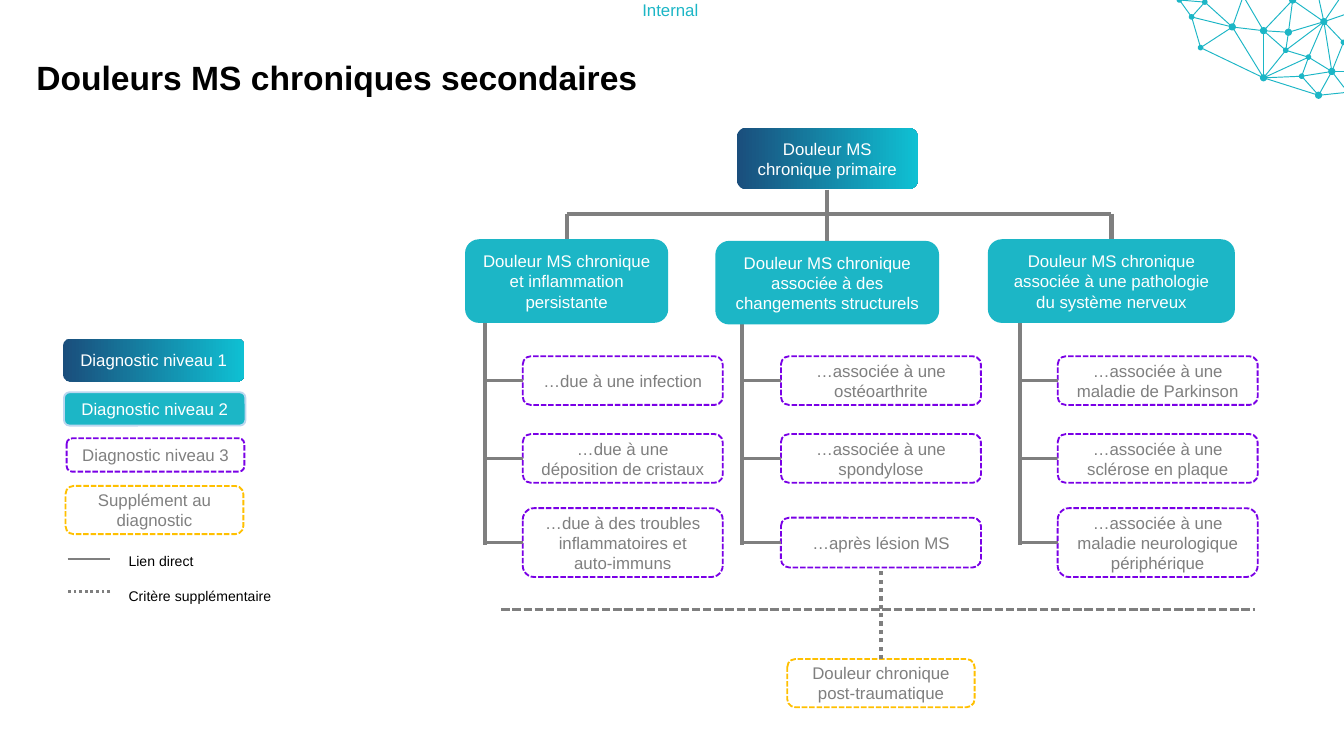
import pptx
import pptx.dml.color
import pptx.enum.dml
import pptx.enum.shapes
import pptx.enum.text
import pptx.oxml.ns
import pptx.util
from lxml import etree

Cm, Pt = pptx.util.Cm, pptx.util.Pt
SHAPE = pptx.enum.shapes.MSO_SHAPE
ANCHOR = pptx.enum.text.MSO_ANCHOR
ALIGN = pptx.enum.text.PP_ALIGN
DASH = pptx.enum.dml.MSO_LINE.SQUARE_DOT
DOT = pptx.enum.dml.MSO_LINE.ROUND_DOT
TOP, LEFT, BOTTOM = 0, 1, 2

TEAL, GREY, LEGEND_GREY = "1CB6C6", "7F7F7F", "808080"
PURPLE, AMBER, WHITE, BLACK = "7A00E6", "FFC000", "FFFFFF", "000000"
GRADIENT = ("1A4E7C", "0FC0D3")


def rgb(value):
    return pptx.dml.color.RGBColor.from_string(value)


class Diagram:
    """Holds the slide and the shared style."""

    font = "Arial"
    size = 9

    def __init__(self, slide):
        self.slide = slide

    def set_text(self, frame, lines, color, size=None, align=ALIGN.LEFT, bold=False, gap=0):
        frame.word_wrap = True
        for number, line in enumerate(lines):
            paragraph = frame.add_paragraph() if number else frame.paragraphs[0]
            paragraph.text = line
            paragraph.alignment = align
            if number:
                paragraph.space_before = Pt(gap)
            paragraph.font.name = self.font
            paragraph.font.size = Pt(size or self.size)
            paragraph.font.bold = bold
            paragraph.font.color.rgb = rgb(color)

    def label(self, left, top, width, height, lines, color, inset=True,
              anchor=ANCHOR.TOP, **style):
        frame = self.slide.shapes.add_textbox(
            Cm(left), Cm(top), Cm(width), Cm(height)).text_frame
        frame.vertical_anchor = anchor
        if not inset:
            frame.margin_left = frame.margin_right = 0
            frame.margin_top = frame.margin_bottom = 0
        self.set_text(frame, lines, color, **style)

    def box(self, left, top, width, height, text, color, fill=None, border=None, dash=None):
        shape = self.slide.shapes.add_shape(
            SHAPE.ROUNDED_RECTANGLE, Cm(left), Cm(top), Cm(width), Cm(height))
        shape.shadow.inherit = False
        if fill is None:
            shape.fill.background()
        elif isinstance(fill, tuple):
            shape.fill.gradient()
            shape.fill.gradient_angle = 0
            for stop, stop_color, position in zip(shape.fill.gradient_stops, fill, (0, 1)):
                stop.color.rgb = rgb(stop_color)
                stop.position = position
        else:
            shape.fill.solid()
            shape.fill.fore_color.rgb = rgb(fill)
        if border:
            shape.line.color.rgb = rgb(border)
            shape.line.width = Pt(1)
            shape.line.dash_style = dash
        else:
            shape.line.fill.background()
        shape.text_frame.vertical_anchor = ANCHOR.MIDDLE
        self.set_text(shape.text_frame, [text], color, align=ALIGN.CENTER)
        return shape

    def line(self, start, end, width=1.5, color=GREY, dash=None, begin=None, finish=None):
        link = self.slide.shapes.add_connector(
            pptx.enum.shapes.MSO_CONNECTOR.STRAIGHT,
            Cm(start[0]), Cm(start[1]), Cm(end[0]), Cm(end[1]))
        link.line.color.rgb = rgb(color)
        link.line.width = Pt(width)
        if dash:
            link.line.dash_style = dash
        properties = link._element.spPr
        etree.SubElement(properties, pptx.oxml.ns.qn("a:effectLst"))
        if begin:
            link.begin_connect(*begin)
        if finish:
            link.end_connect(*finish)

    def dot(self, center, diameter):
        x, y = center
        shape = self.slide.shapes.add_shape(
            SHAPE.OVAL, Cm(x - diameter / 2), Cm(y - diameter / 2), Cm(diameter), Cm(diameter))
        shape.shadow.inherit = False
        shape.fill.solid()
        shape.fill.fore_color.rgb = rgb(TEAL)
        shape.line.color.rgb = rgb(TEAL)
        shape.line.width = Pt(1)


# Corner network: nodes, links between them, links leaving the slide
NODES = {
    "A": (23.88, 1.47), "B": (23.88, 0.58), "C": (23.29, 0.51), "D": (24.43, 0),
    "E": (25.02, 0.41), "F": (25.39, 0.8), "G": (25.17, 1.35), "H": (24.92, 1.8),
    "I": (24.6, 1.44), "J": (24.35, 0.61), "K": (24.73, 1.08), "L": (24.3, 0.95),
    "M": (22.77, 0.04), "N": (22.69, 0.9), "O": (22.52, 0.32), "P": (22.29, 0),
}
LINKS = ("CA AL EJ LE AK EK LJ AI EG LK DJ KG FG IG IH HG BA JB DB CB MC DE FE "
         "IK LB MO OC AH CN NA ON PO PM").split()
EXITS = [("B", (23.54, 0)), ("C", (23.47, 0)), ("E", (24.93, 0)), ("E", (25.3, 0)),
         ("E", (25.4, 0.28)), ("G", (25.4, 1.35)), ("G", (25.4, 1.65)), ("H", (25.4, 1.75))]

# Columns: level 2 text and box, trunk x, level 3 left, level 3 texts with heights
COLUMNS = [
    ("Douleur MS chronique et inflammation persistante", (8.79, 4.52, 3.84, 1.58), 9.17, 9.88,
     [("…due à une infection", 0.92), ("…due à une déposition de cristaux", 0.92),
      ("…due à des troubles inflammatoires et auto-immuns", 1.3)]),
    ("Douleur MS chronique associée à des changements structurels",
     (13.52, 4.55, 4.23, 1.58), 14.02, 14.76,
     [("…associée à une ostéoarthrite", 0.92), ("…associée à une spondylose", 0.92),
      ("…après lésion MS", 0.94)]),
    ("Douleur MS chronique associée à une pathologie du système nerveux",
     (18.67, 4.52, 4.67, 1.58), 19.28, 19.99,
     [("…associée à une maladie de Parkinson", 0.92),
      ("…associée à une sclérose en plaque", 0.92),
      ("…associée à une maladie neurologique périphérique", 1.3)]),
]
ROW_MIDDLES = (7.19, 8.66, 10.25)
LEVEL3_WIDTH = 3.78
BUS_Y = 4.04


def main():
    deck = pptx.Presentation()
    deck.slide_width, deck.slide_height = Cm(25.4), Cm(14.28)
    diagram = Diagram(deck.slides.add_slide(deck.slide_layouts[6]))

    # Header and corner decoration
    diagram.label(12.14, 0, 1.19, 0.38, ["Internal"], TEAL, inset=False)
    for first, second in LINKS:
        diagram.line(NODES[first], NODES[second], 0.5, TEAL)
    for node, exit_point in EXITS:
        diagram.line(NODES[node], exit_point, 0.5, TEAL)
    for node, center in NODES.items():
        diagram.dot(center, 0.1 if node in "ABCDEGHJ" else 0.07)
    diagram.label(0.69, 1.14, 24.08, 0.69, ["Douleurs MS chroniques secondaires"], BLACK,
                  inset=False, anchor=ANCHOR.BOTTOM, size=18, bold=True)

    # Level 1
    primary = diagram.box(13.92, 2.41, 3.43, 1.17, "Douleur MS chronique primaire",
                          WHITE, GRADIENT)

    # Levels 2 and 3 with their branches
    centers, level2, last_row = [], [], []
    for family, bounds, trunk, left, diagnoses in COLUMNS:
        diagram.line((trunk, 5.97), (trunk, 10.29), 2.25)
        for middle, (diagnosis, height) in zip(ROW_MIDDLES, diagnoses):
            leaf = diagram.box(left, middle - height / 2, LEVEL3_WIDTH, height, diagnosis,
                               GREY, border=PURPLE, dash=DASH)
            diagram.line((trunk, middle), (left, middle), finish=(leaf, LEFT))
        last_row.append(leaf)
        level2.append(diagram.box(*bounds, family, WHITE, TEAL))
        centers.append(bounds[0] + bounds[2] / 2)

    # Links from level 1 to level 2
    diagram.line((centers[0], BUS_Y), (centers[2], BUS_Y), 2.25)
    diagram.line((centers[1], 3.58), (centers[1], 4.55), 2.25,
                 begin=(primary, BOTTOM), finish=(level2[1], TOP))
    for side in (0, 2):
        diagram.line((centers[side], BUS_Y), (centers[side], 4.52), 2.25,
                     finish=(level2[side], TOP))

    # Additional criterion
    diagram.line((9.47, 11.51), (23.72, 11.51), dash=DASH)
    post_traumatic = diagram.box(14.88, 12.45, 3.54, 0.91, "Douleur chronique post-traumatique",
                                 GREY, border=AMBER, dash=DASH)
    diagram.line((16.65, 12.45), (16.65, 10.72), 2.25, dash=DOT,
                 begin=(post_traumatic, TOP), finish=(last_row[1], BOTTOM))

    # Legend
    diagram.box(1.19, 6.4, 3.43, 0.81, "Diagnostic niveau 1", WHITE, GRADIENT)
    diagram.box(1.21, 7.41, 3.43, 0.63, "Diagnostic niveau 2", WHITE, TEAL, "BBD7EF")
    diagram.box(1.26, 8.28, 3.36, 0.63, "Diagnostic niveau 3", LEGEND_GREY,
                border=PURPLE, dash=DASH)
    diagram.box(1.24, 9.18, 3.36, 0.91, "Supplément au diagnostic", LEGEND_GREY,
                border=AMBER, dash=DASH)
    diagram.line((1.28, 10.56), (2.08, 10.56))
    diagram.line((2.08, 11.18), (1.28, 11.18), dash=DOT)
    diagram.label(2.18, 10.31, 3.35, 1.22, ["Lien direct", "Critère supplémentaire"], BLACK,
                  size=7.5, gap=9.5)

    deck.save("out.pptx")


if __name__ == "__main__":
    main()
